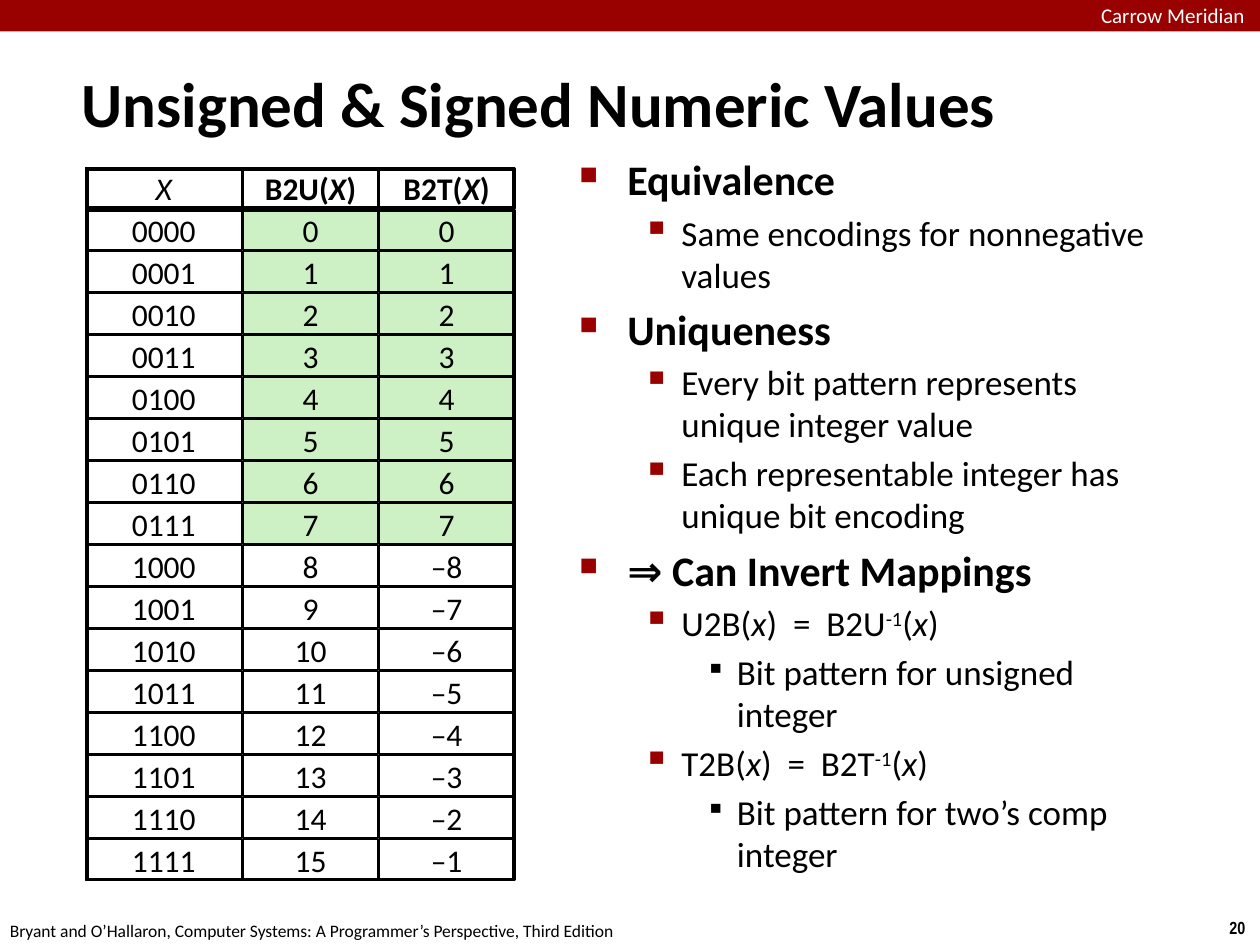
from lxml.etree import SubElement as Sub
from pptx import Presentation
from pptx.dml.color import RGBColor
from pptx.enum.shapes import MSO_SHAPE as Kind
from pptx.enum.text import MSO_ANCHOR as Anchor, MSO_AUTO_SIZE as Fit, PP_ALIGN as Align
from pptx.oxml.ns import qn
from pptx.util import Inches, Pt

RED, GREEN, WHITE, BLACK = "990000", "CDF1C5", "FFFFFF", "000000"
TITLE = "Unsigned & Signed Numeric Values"
HEADS = ["*X*", "B2U(*X*)", "B2T(*X*)"]
BITS = 4
POINTS = [
    (0, "Equivalence"),
    (1, "Same encodings for nonnegative values"),
    (0, "Uniqueness"),
    (1, "Every bit pattern represents unique integer value"),
    (1, "Each representable integer has unique bit encoding"),
    (0, "⇒ Can Invert Mappings"),
    (1, "U2B(*x*)  =  B2U^-1^(*x*)"),
    (2, "Bit pattern for unsigned integer"),
    (1, "T2B(*x*)  =  B2T^-1^(*x*)"),
    (2, "Bit pattern for two’s comp integer"),
]
LEVELS = [
    {"size": 24, "bold": True, "left": 0.38, "hang": 0.38, "mark": "■", "scale": 60, "tint": RED},
    {"size": 20, "bold": False, "left": 0.81, "hang": 0.31, "mark": "▪", "scale": 110, "tint": RED},
    {"size": 20, "bold": False, "left": 1.25, "hang": 0.25, "mark": "▪", "scale": 80, "tint": BLACK},
]
LABELS = [
    ((8.64, -0.03, 1.43, 0.3), "Carrow Meridian", True,
     {"size": 12, "tint": WHITE}),
    ((9.66, 7.23, 0.34, 0.27), "20", False,
     {"size": 10, "bold": True, "face": "Arial Narrow"}),
    ((-0.02, 7.25, 5.08, 0.27),
     "Bryant and O’Hallaron, Computer Systems: A Programmer’s Perspective, Third Edition",
     False, {"size": 10}),
]
COLS = [(0.68, 1.24), (1.93, 1.07), (3.01, 1.07)]
TOP, STEP, HIGH = 1.33, 1 / 3, 0.32


def color(code):
    return RGBColor.from_string(code)


def write(para, text, size, bold=False, face="Calibri", tint=BLACK):
    for i, part in enumerate(text.split("*")):
        for j, piece in enumerate(part.split("^")):
            if not piece:
                continue
            run = para.add_run()
            run.text = piece
            look = {"size": Pt(size), "bold": bold, "italic": i % 2 == 1, "name": face}
            for key, value in look.items():
                setattr(run.font, key, value)
            run.font.color.rgb = color(tint)
            if j % 2:
                run.font._element.set("baseline", "30000")


def indent(para, left, hang):
    props = para._p.get_or_add_pPr()
    props.set("marL", str(Inches(left)))
    props.set("indent", str(-Inches(hang)))
    return props


def bullet(para, level):
    style = LEVELS[level]
    para.level = level
    props = indent(para, style["left"], style["hang"])
    space = Sub(props, qn("a:spcBef"))
    Sub(space, qn("a:spcPct")).set("val", "20000")
    Sub(Sub(props, qn("a:buClr")), qn("a:srgbClr")).set("val", style["tint"])
    Sub(props, qn("a:buSzPct")).set("val", str(style["scale"] * 1000))
    Sub(props, qn("a:buChar")).set("char", style["mark"])


def rect(shapes, box, fill=None, line=None, width=1):
    shape = shapes.add_shape(Kind.RECTANGLE, *map(Inches, box))
    shape.shadow.inherit = False
    if fill:
        shape.fill.solid()
        shape.fill.fore_color.rgb = color(fill)
    else:
        shape.fill.background()
    if line:
        shape.line.color.rgb = color(line)
        shape.line.width = Pt(width)
    else:
        shape.line.fill.background()
    return shape


def cell(shapes, col, row, text, fill=WHITE, bold=False):
    left, wide = COLS[col]
    shape = rect(shapes, (left, TOP + row * STEP, wide, HIGH), fill, BLACK)
    frame = shape.text_frame
    frame.word_wrap = False
    frame.vertical_anchor = Anchor.MIDDLE
    para = frame.paragraphs[0]
    para.alignment = Align.CENTER
    write(para, text, 18, bold)


def grid(slide):
    shapes = slide.shapes.add_group_shape().shapes
    for col, head in enumerate(HEADS):
        cell(shapes, col, 0, head, bold=col > 0)
    count = 2 ** BITS
    half = count // 2
    for num in range(count):
        signed = str(num) if num < half else f"–{count - num}"
        for col, text in enumerate([f"{num:0{BITS}b}", str(num), signed]):
            fill = GREEN if col and num < half else WHITE
            cell(shapes, col, num + 1, text, fill)
    for box in [(0.69, 1.34, 3.39, 0.31), (0.69, 1.67, 3.39, 5.31)]:
        rect(shapes, box, line=BLACK, width=2)


def title(slide):
    shape = slide.shapes.title
    box = dict(zip(("left", "top", "width", "height"), (0.58, 0.48, 9.08, 0.61)))
    for key, value in box.items():
        setattr(shape, key, Inches(value))
    frame = shape.text_frame
    look = {"margin_left": Inches(0.07), "margin_right": Inches(0.07),
            "margin_top": Inches(0.03), "margin_bottom": Inches(0.03),
            "word_wrap": False, "auto_size": Fit.SHAPE_TO_FIT_TEXT,
            "vertical_anchor": Anchor.TOP}
    for key, value in look.items():
        setattr(frame, key, value)
    para = frame.paragraphs[0]
    para.alignment = Align.LEFT
    indent(para, 0.13, 0.13)
    write(para, TITLE, 36, True)


def body(slide):
    frame = slide.shapes.add_textbox(*map(Inches, (4.5, 1.17, 4.88, 5.71))).text_frame
    frame.word_wrap = True
    for num, (level, text) in enumerate(POINTS):
        para = frame.add_paragraph() if num else frame.paragraphs[0]
        bullet(para, level)
        write(para, text, LEVELS[level]["size"], LEVELS[level]["bold"])


def main():
    deck = Presentation()
    deck.slide_width, deck.slide_height = Inches(10), Inches(7.5)
    slide = deck.slides.add_slide(deck.slide_layouts[5])
    rect(slide.shapes, (0, 0, 10, 0.25), RED)
    for box, text, wrap, style in LABELS:
        frame = slide.shapes.add_textbox(*map(Inches, box)).text_frame
        frame.word_wrap = wrap
        frame.auto_size = Fit.SHAPE_TO_FIT_TEXT
        write(frame.paragraphs[0], text, **style)
    title(slide)
    body(slide)
    grid(slide)
    deck.save("out.pptx")


if __name__ == "__main__":
    main()
